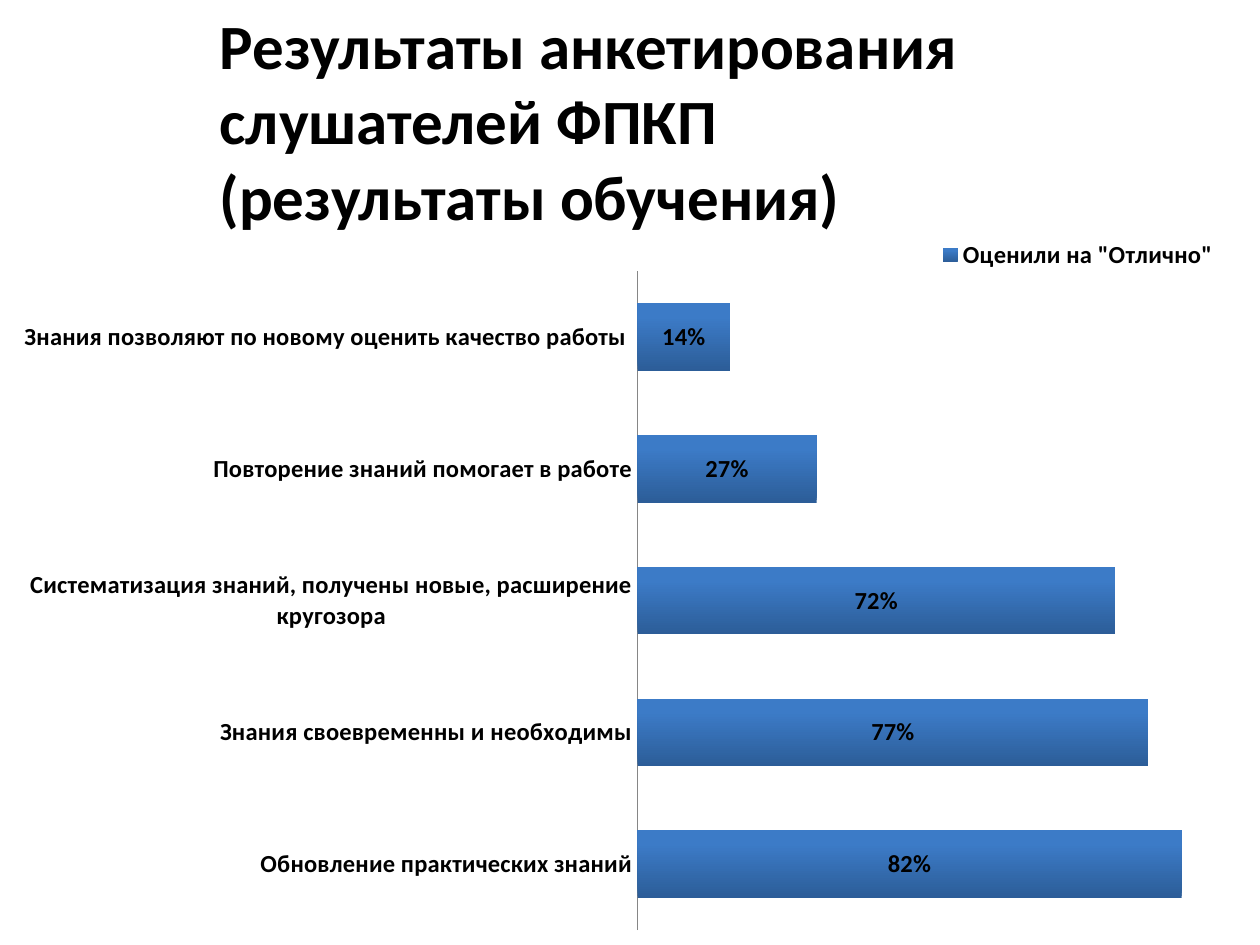
from lxml import etree
from pptx import Presentation
from pptx.chart.data import CategoryChartData
from pptx.dml.color import RGBColor
from pptx.enum.chart import XL_CHART_TYPE as ChartType
from pptx.enum.chart import XL_LABEL_POSITION as LabelPosition
from pptx.enum.chart import XL_LEGEND_POSITION as LegendPosition
from pptx.enum.chart import XL_TICK_MARK as TickMark
from pptx.enum.text import MSO_ANCHOR, MSO_AUTO_SIZE, PP_ALIGN
from pptx.oxml.ns import qn
from pptx.util import Pt

PX = 914400 // 126
WIDTH, HEIGHT = 1260, 945
CHART_TOP = 207
CHART_HEIGHT = HEIGHT - CHART_TOP

BLACK = RGBColor(0x00, 0x00, 0x00)
AXIS_GRAY = RGBColor(0x86, 0x86, 0x86)
BAR_DARK = RGBColor(0x2C, 0x5D, 0x98)
BAR_LIGHT = RGBColor(0x3C, 0x7B, 0xC7)

RATINGS = {
    "Обновление практических знаний": 0.82,
    "Знания своевременны и необходимы": 0.77,
    "Систематизация знаний, получены новые, расширение кругозора": 0.72,
    "Повторение знаний помогает в работе": 0.27,
    "Знания позволяют по новому оценить качество работы ": 0.14,
}


def format_font(font, size):
    for name, value in {"name": "Calibri", "size": Pt(size), "bold": True}.items():
        setattr(font, name, value)
    font.color.rgb = BLACK


def place_in_chart(element, left, top, width, height, inner=False):
    """Give a chart part a fixed place, in px on the slide."""
    for old in element.findall(qn("c:layout")):
        element.remove(old)
    layout = etree.Element(qn("c:layout"))
    manual = etree.SubElement(layout, qn("c:manualLayout"))
    settings = {"layoutTarget": "inner"} if inner else {}
    settings |= {
        "xMode": "edge",
        "yMode": "edge",
        "x": round(left / WIDTH, 3),
        "y": round((top - CHART_TOP) / CHART_HEIGHT, 3),
        "w": round(width / WIDTH, 3),
        "h": round(height / CHART_HEIGHT, 3),
    }
    for tag, value in settings.items():
        etree.SubElement(manual, qn(f"c:{tag}")).set("val", str(value))
    # The layout leads the plot area, and follows the position in a legend
    element.insert(0 if inner else 1, layout)


presentation = Presentation()
presentation.slide_width = WIDTH * PX
presentation.slide_height = HEIGHT * PX
slide = presentation.slides.add_slide(presentation.slide_layouts[5])

# Bar chart
chart_data = CategoryChartData(number_format="0%")
chart_data.categories = list(RATINGS)
chart_data.add_series('Оценили на "Отлично"', list(RATINGS.values()))
chart = slide.shapes.add_chart(
    ChartType.BAR_STACKED, 0, CHART_TOP * PX, WIDTH * PX, CHART_HEIGHT * PX, chart_data
).chart
chart.has_title = False
format_font(chart.font, 14)

# Bars and their labels
plot = chart.plots[0]
plot.gap_width = 95
plot.overlap = 100
plot.vary_by_categories = False
fill = plot.series[0].format.fill
fill.gradient()
fill.gradient_angle = 90
for stop, color, position in zip(fill.gradient_stops, (BAR_DARK, BAR_LIGHT), (0, 0.8)):
    stop.color.rgb = color
    stop.position = position
plot.has_data_labels = True
labels = plot.data_labels
labels.show_value = True
labels.number_format = "0%"
labels.number_format_is_linked = False
labels.position = LabelPosition.CENTER
format_font(labels.font, 14)

# Axes
category_axis = chart.category_axis
category_axis.major_tick_mark = TickMark.NONE
category_axis.format.line.color.rgb = AXIS_GRAY
format_font(category_axis.tick_labels.font, 14)
value_axis = chart.value_axis
value_axis.visible = False
value_axis.has_major_gridlines = False
value_axis.minimum_scale = 0
value_axis.maximum_scale = 0.9

# Legend
chart.has_legend = True
legend = chart.legend
legend.position = LegendPosition.TOP
legend.include_in_layout = False
format_font(legend.font, 14)

plot_area = chart.element.find(f".//{qn('c:plotArea')}")
place_in_chart(plot_area, 638, 271, 597, 659, inner=True)
place_in_chart(chart.element.find(f".//{qn('c:legend')}"), 936, 238, 284, 34)

# Title, in front of the chart
title = slide.shapes.title
title.left, title.top = 207 * PX, 0
title.width, title.height = 1053 * PX, 242 * PX
title.element.getparent().append(title.element)
frame = title.text_frame
frame.text = "Результаты анкетирования слушателей ФПКП\v(результаты обучения)"
for name, value in {
    "word_wrap": True,
    "auto_size": MSO_AUTO_SIZE.SHAPE_TO_FIT_TEXT,
    "vertical_anchor": MSO_ANCHOR.TOP,
}.items():
    setattr(frame, name, value)
paragraph = frame.paragraphs[0]
paragraph.alignment = PP_ALIGN.LEFT
for run in paragraph.runs:
    format_font(run.font, 36)

presentation.save("out.pptx")
